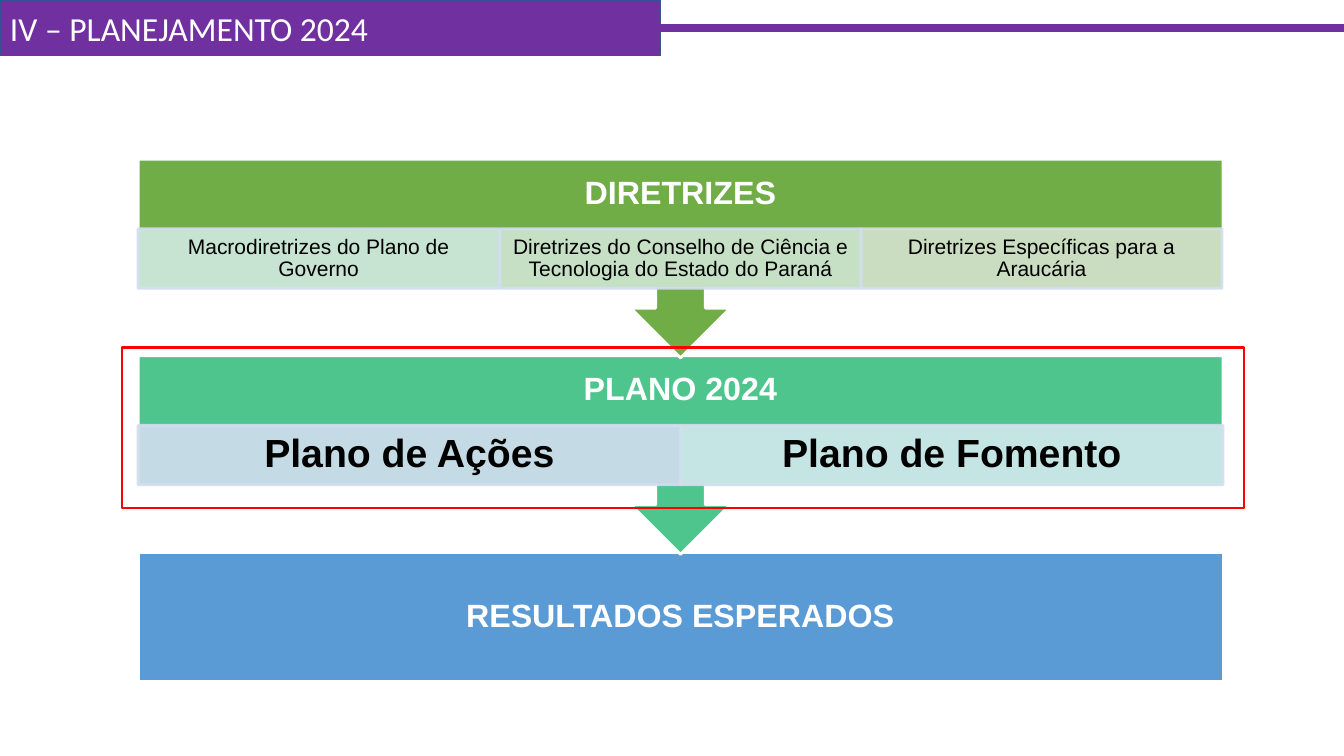
from lxml import etree
from pptx import Presentation
from pptx.dml.color import RGBColor
from pptx.enum.shapes import MSO_CONNECTOR, MSO_SHAPE
from pptx.enum.text import MSO_ANCHOR, PP_ALIGN
from pptx.oxml.ns import qn
from pptx.util import Pt

RECTANGLE = MSO_SHAPE.RECTANGLE
ARROW_CALLOUT = MSO_SHAPE.DOWN_ARROW_CALLOUT
STRAIGHT = MSO_CONNECTOR.STRAIGHT
MIDDLE = MSO_ANCHOR.MIDDLE
LEFT, CENTER = PP_ALIGN.LEFT, PP_ALIGN.CENTER

WHITE = RGBColor(0xFF, 0xFF, 0xFF)
BLACK = RGBColor(0x00, 0x00, 0x00)
RED = RGBColor(0xFF, 0x00, 0x00)
PURPLE = RGBColor(0x70, 0x30, 0xA0)
NAVY = RGBColor(0x31, 0x53, 0x8F)
BLUE = RGBColor(0x5B, 0x9B, 0xD5)
TEAL = RGBColor(0x4D, 0xC5, 0x8D)
GREEN = RGBColor(0x70, 0xAD, 0x47)
PALE_BLUE = RGBColor(0xD2, 0xDE, 0xEF)
PALE_CYAN = RGBColor(0xD1, 0xE9, 0xED)
PALE_TEAL = RGBColor(0xD0, 0xEA, 0xE1)
PALE_GREEN = RGBColor(0xD0, 0xE6, 0xD4)
PALE_OLIVE = RGBColor(0xD5, 0xE3, 0xCF)

EMU_PER_PX = 9144  # 100 px to the inch
SLIDE_WIDTH, SLIDE_HEIGHT = 1333, 750
BLOCK_LEFT, BLOCK_TOP, BLOCK_WIDTH = 137, 158, 1076
BLOCK_PITCH, CALLOUT_HEIGHT, RESULT_HEIGHT = 195, 197, 128
HEADING_HEIGHT, CELL_HEIGHT = 69, 59


def px(length):
    return length * EMU_PER_PX


class SlideBuilder:
    body_font = "Arial"
    title_font = "Calibri"

    def __init__(self, presentation):
        self.slide = presentation.slides.add_slide(presentation.slide_layouts[6])

    def box(self, preset, left, top, width, height, fill, line, line_width=2):
        shape = self.slide.shapes.add_shape(
            preset, px(left), px(top), px(width), px(height))
        shape.shadow.inherit = False
        if fill is None:
            shape.fill.background()
        else:
            shape.fill.solid()
            shape.fill.fore_color.rgb = fill
        shape.line.color.rgb = line
        shape.line.width = Pt(line_width)
        return shape

    def label(self, shape, text, size, color, insets, bold=False,
              font=body_font, align=CENTER, spacing=0.9):
        """Set the text; insets are left, top, right and bottom."""
        frame = shape.text_frame
        frame.word_wrap = True
        frame.vertical_anchor = MIDDLE
        (frame.margin_left, frame.margin_top,
         frame.margin_right, frame.margin_bottom) = map(px, insets)
        frame.text = text
        paragraph = frame.paragraphs[0]
        paragraph.alignment = align
        paragraph.line_spacing = spacing
        run_font = paragraph.runs[0].font
        run_font.name = font
        run_font.size = Pt(size)
        run_font.bold = bold
        run_font.color.rgb = color

    def title(self, text):
        shape = self.box(RECTANGLE, 0, 0, 655, 55, PURPLE, NAVY, 1)
        self.label(shape, text, 24, WHITE, (10, 5, 10, 5),
                   font=self.title_font, align=LEFT, spacing=1.0)

    def rule(self, left, right, y):
        connector = self.slide.shapes.add_connector(
            STRAIGHT, px(left), px(y), px(right), px(y))
        connector.line.color.rgb = PURPLE
        connector.line.width = Pt(6)
        etree.SubElement(connector._element.spPr, qn("a:effectLst"))

    def result(self, top, text, fill):
        shape = self.box(RECTANGLE, BLOCK_LEFT, top, BLOCK_WIDTH,
                         RESULT_HEIGHT, fill, WHITE)
        self.label(shape, text, 23, WHITE, (18, 18, 18, 18), bold=True)

    def callout(self, top, heading, fill, cells, size, insets, bold):
        """Draw a heading with an arrow below and a row of equal cells."""
        shape = self.box(ARROW_CALLOUT, BLOCK_LEFT, top, BLOCK_WIDTH,
                         CALLOUT_HEIGHT, fill, WHITE)
        self.label(shape, heading, 23, WHITE,
                   (18, 18, 18, 18 + CELL_HEIGHT), bold=True)
        width = BLOCK_WIDTH // len(cells)
        for index, (text, cell_fill) in enumerate(cells):
            left = BLOCK_LEFT + round(index * BLOCK_WIDTH / len(cells))
            cell = self.box(RECTANGLE, left, top + HEADING_HEIGHT, width,
                            CELL_HEIGHT, cell_fill, PALE_BLUE)
            for color in cell._element.spPr.iter(qn("a:srgbClr")):
                etree.SubElement(color, qn("a:alpha"), val="90000")
            self.label(cell, text, size, BLACK, insets, bold=bold)

    def highlight(self, left, top, width, height):
        self.box(RECTANGLE, left, top, width, height, None, RED)


def main():
    presentation = Presentation()
    presentation.slide_width = px(SLIDE_WIDTH)
    presentation.slide_height = px(SLIDE_HEIGHT)
    builder = SlideBuilder(presentation)

    builder.title("IV – PLANEJAMENTO 2024")
    builder.rule(655, SLIDE_WIDTH, 28)
    guidelines_top, plan_top, results_top = (
        BLOCK_TOP + step * BLOCK_PITCH for step in range(3))
    builder.result(results_top, "RESULTADOS ESPERADOS", BLUE)
    builder.callout(plan_top, "PLANO 2024", TEAL, [
        ("Plano de Ações", PALE_BLUE),
        ("Plano de Fomento", PALE_CYAN),
    ], 28, (22, 4, 22, 4), True)
    builder.callout(guidelines_top, "DIRETRIZES", GREEN, [
        ("Macrodiretrizes do Plano de Governo", PALE_TEAL),
        ("Diretrizes do Conselho de Ciência e Tecnologia do Estado do Paraná",
         PALE_GREEN),
        ("Diretrizes Específicas para a Araucária", PALE_OLIVE),
    ], 15, (12, 2, 12, 2), False)
    builder.highlight(121, 345, 1113, 159)
    presentation.save("out.pptx")


if __name__ == "__main__":
    main()
